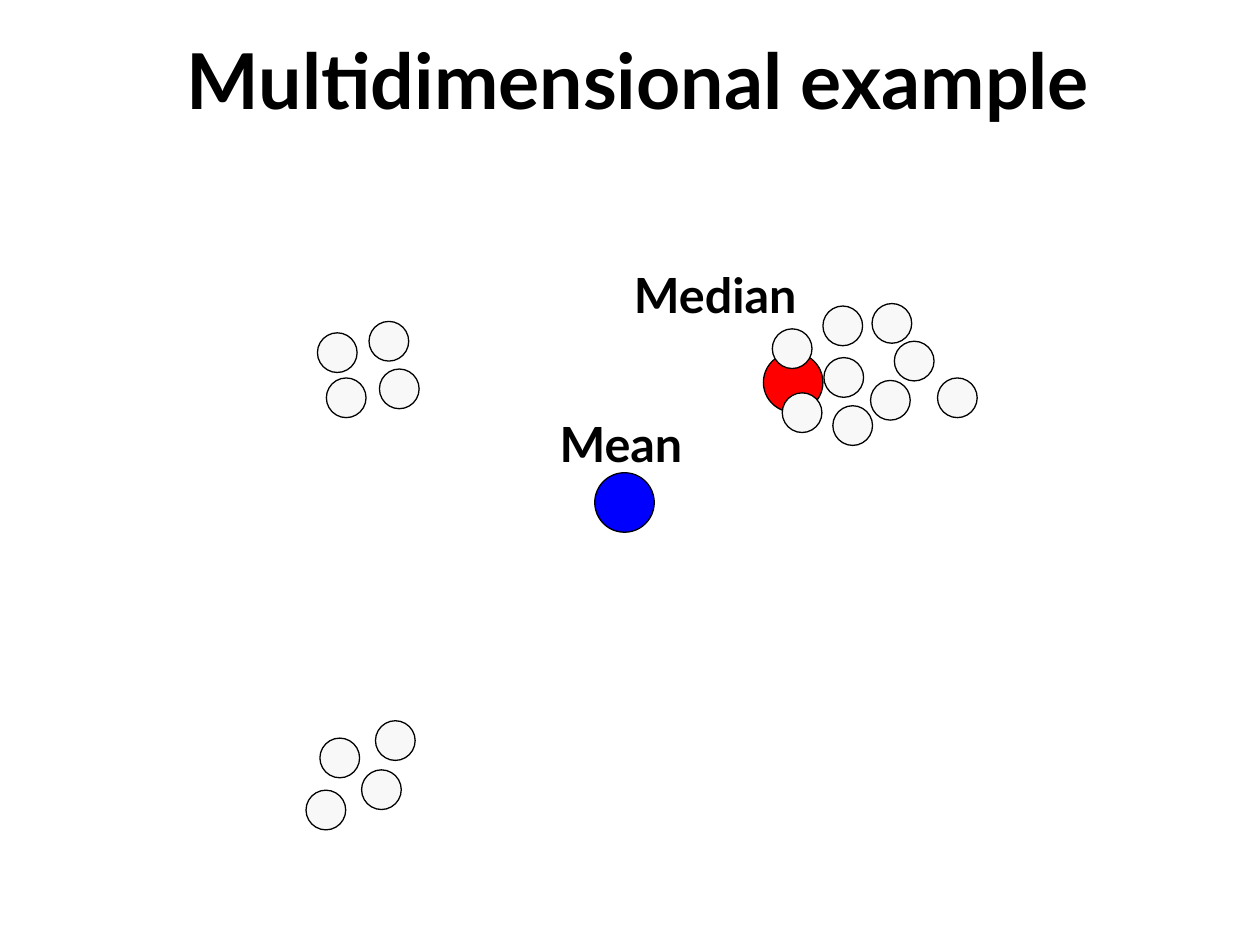
from pptx import Presentation
from pptx.dml.color import RGBColor as Rgb
from pptx.enum.shapes import MSO_SHAPE as Shape
from pptx.enum.text import MSO_ANCHOR as Anchor, PP_ALIGN as Align
from pptx.util import Cm, Pt

HUES = {"ink": "000000", "point": "F8F8F8", "median": "FF0000", "mean": "0000FF"}
FONT = "Lato"
SMALL, LARGE = 0.8, 1.2
RIGHT = [(17.55, 7.67), (15.57, 6.63), (17.58, 6.12), (16.61, 7.21), (18.9, 7.62),
         (16.79, 8.18), (16.59, 6.17), (18.03, 6.88), (15.77, 7.92)]
UPPER = [(6.4, 6.71), (7.44, 6.48), (7.65, 7.44), (6.58, 7.62)]
LOWER = [(6.45, 14.88), (6.17, 15.93), (7.29, 15.52), (7.57, 14.53)]


def hue(name):
    """Return the named colour."""
    return Rgb.from_string(HUES[name])


def dot(slide, left, top, size, fill):
    """Draw an outlined circle."""
    shape = slide.shapes.add_shape(Shape.OVAL, Cm(left), Cm(top), Cm(size), Cm(size))
    shape.shadow.inherit = False
    shape.fill.solid()
    shape.fill.fore_color.rgb = hue(fill)
    shape.line.color.rgb = hue("ink")
    shape.line.width = Pt(0.75)


def label(slide, text, box, size, align=Align.LEFT):
    """Write a bold line of text without insets."""
    frame = slide.shapes.add_textbox(*map(Cm, box)).text_frame
    frame.word_wrap = True
    frame.vertical_anchor = Anchor.MIDDLE
    frame.margin_left = frame.margin_right = 0
    frame.margin_top = frame.margin_bottom = 0
    para = frame.paragraphs[0]
    para.text = text
    para.alignment = align
    font = para.font
    font.name, font.size, font.bold = FONT, Pt(size), True
    font.color.rgb = hue("ink")


def main():
    """Build the slide and save it."""
    deck = Presentation()
    deck.slide_width, deck.slide_height = Cm(25.4), Cm(19.05)
    slide = deck.slides.add_slide(deck.slide_layouts[6])
    label(slide, "Multidimensional example", (1.98, 0.53, 21.79, 2.13), 44, Align.CENTER)
    dot(slide, 15.39, 7.11, LARGE, "median")
    for left, top in RIGHT + UPPER + LOWER:
        dot(slide, left, top, SMALL, "point")
    dot(slide, 11.99, 9.53, LARGE, "mean")
    label(slide, "Mean", (11.28, 8.33, 2.69, 1.19), 27.7)
    label(slide, "Median", (12.78, 5.33, 3.61, 1.19), 27.7)
    deck.save("out.pptx")


if __name__ == "__main__":
    main()
